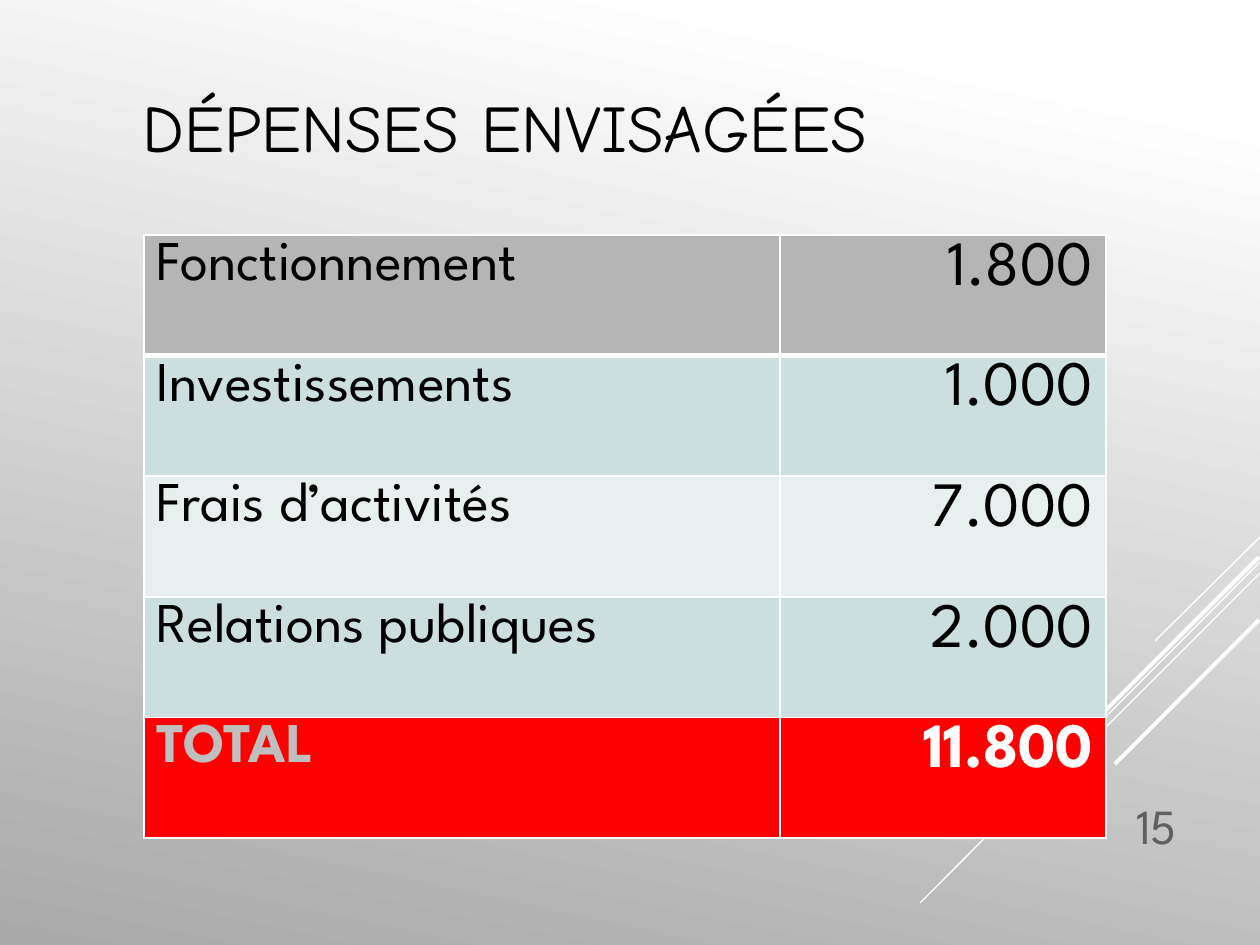
from lxml import etree
from pptx import Presentation, util as u
from pptx.dml.color import RGBColor
from pptx.enum import shapes, text
from pptx.oxml.ns import qn

PX = 914400 / 126
SANS = "League Spartan"
LEFT, RIGHT = text.PP_ALIGN.LEFT, text.PP_ALIGN.RIGHT
TOP, MID, LOW = text.MSO_ANCHOR.TOP, text.MSO_ANCHOR.MIDDLE, text.MSO_ANCHOR.BOTTOM


def px(*nums):
    return [u.Emu(round(n * PX)) for n in nums]


def write(frame, words, size, color="000000", font=SANS, bold=False, align=LEFT, anchor=TOP):
    frame.word_wrap = True
    frame.vertical_anchor = anchor
    para = frame.paragraphs[0]
    para.alignment = align
    run = para.add_run()
    run.text = words
    run.font.size = u.Pt(size)
    run.font.name = font
    run.font.bold = bold
    run.font.color.rgb = RGBColor.from_string(color)


prs = Presentation()
prs.slide_width, prs.slide_height = px(1260, 945)
slide = prs.slides.add_slide(prs.slide_layouts[5])

# Background
back = slide.background.fill
back.gradient()
back.gradient_angle = 360 - 102
for stop, (pos, color) in zip(back.gradient_stops, [(0.1, "FFFFFF"), (1, "A9A9A9")]):
    stop.position = pos
    stop.color.rgb = RGBColor.from_string(color)

# Diagonal lines
rays = [
    (1260, 537, 1155, 641, 0.75),
    (1260, 562, 920, 903, 0.75),
    (1260, 573, 1043, 790, 0.75),
    (1259, 557, 1061, 755, 2.25),
    (1259, 620, 1115, 764, 2.25),
]
for *ends, width in rays:
    ray = slide.shapes.add_connector(shapes.MSO_CONNECTOR.STRAIGHT, *px(*ends))
    ray.line.color.rgb = RGBColor.from_string("FFFFFF")
    ray.line.width = u.Pt(width)
    etree.SubElement(ray._element.spPr, qn("a:effectLst"))

# Title
title = slide.shapes.title
title.left, title.top, title.width, title.height = px(130, 21, 903, 210)
write(title.text_frame, "DÉPENSES ENVISAGÉES", 38, font="Comic Neue", anchor=MID)

# Table of expenses: label, amount, fill
rows = [
    ("Fonctionnement", "1.800", "B5B5B5"),
    ("Investissements", "1.000", "CCDEDE"),
    ("Frais d’activités", "7.000", "E7EFEF"),
    ("Relations publiques", "2.000", "CCDEDE"),
    ("TOTAL", "11.800", "FF0000"),
]
table = slide.shapes.add_table(len(rows), 2, *px(144, 235, 962, 603)).table
table.first_row = table.horz_banding = False
table.columns[0].width, table.columns[1].width = px(636, 326)

for r, (label, sum_, fill) in enumerate(rows):
    total = label == "TOTAL"
    name, value = table.cell(r, 0), table.cell(r, 1)
    for cell in (name, value):
        props = cell._tc.get_or_add_tcPr()
        for side in ("L", "R", "T", "B"):
            thick = (r, side) in ((0, "B"), (1, "T"))
            edge = etree.SubElement(props, qn("a:ln" + side), w=str(u.Pt(3 if thick else 1)))
            paint = etree.SubElement(edge, qn("a:solidFill"))
            etree.SubElement(paint, qn("a:srgbClr"), val="FFFFFF")
        cell.fill.solid()
        cell.fill.fore_color.rgb = RGBColor.from_string(fill)
    write(name.text_frame, label, 32, "BFBFBF" if total else "000000", bold=total)
    write(value.text_frame, sum_, 36, "FFFFFF" if total else "000000", bold=total, align=RIGHT)

# Page number
page = slide.shapes.add_textbox(*px(1071, 769, 118, 92))
write(page.text_frame, "15", 28, "606060", align=RIGHT, anchor=LOW)

prs.save("out.pptx")
